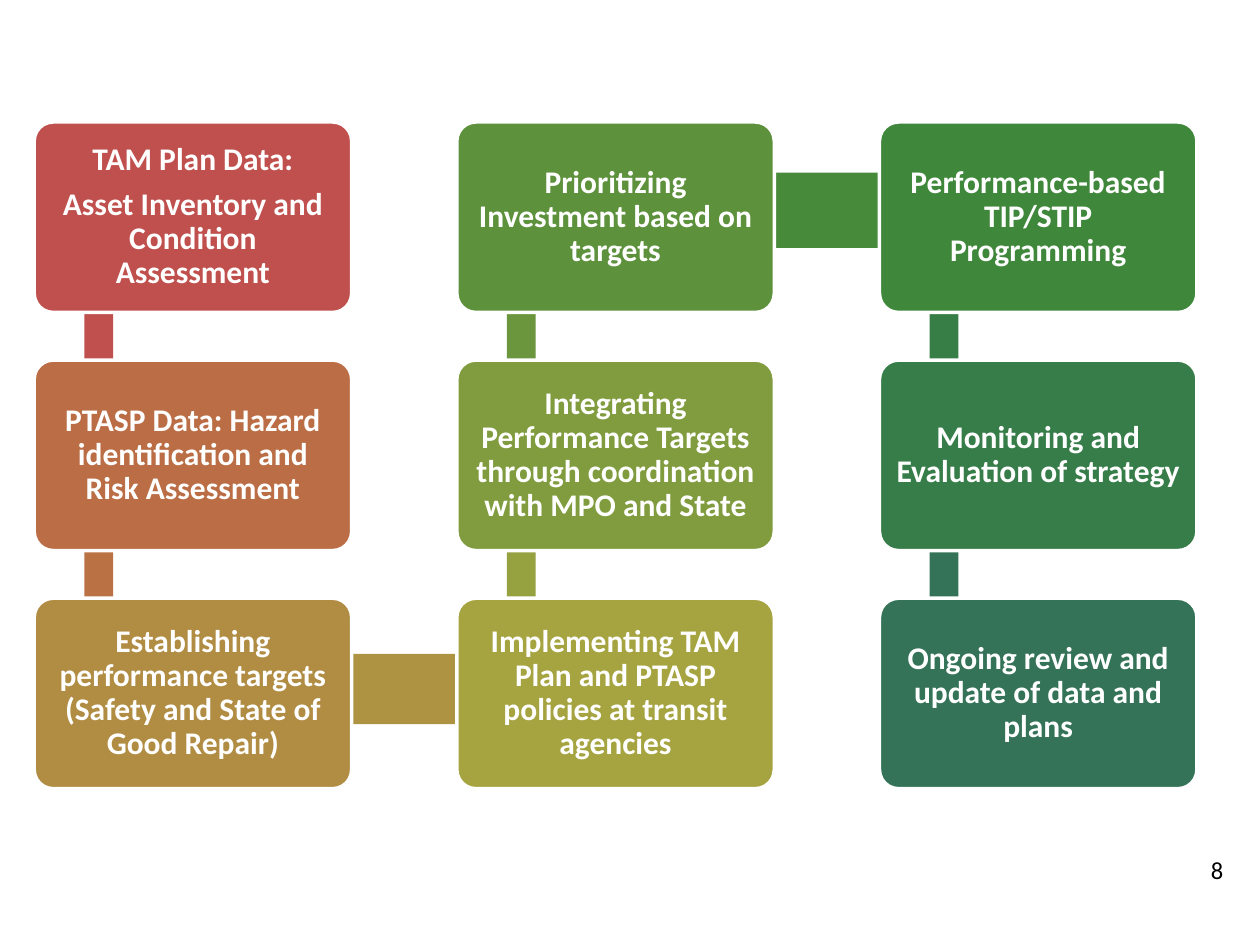
from pptx import Presentation
from pptx.dml.color import RGBColor
from pptx.enum.shapes import MSO_SHAPE as Shape
from pptx.enum.text import MSO_ANCHOR as Anchor, PP_ALIGN as Align
from pptx.util import Cm, Pt

FONT = "Calibri"
WHITE = RGBColor(0xFF, 0xFF, 0xFF)
BLACK = RGBColor(0, 0, 0)

# Steps in order: column, row, colour, paragraphs
STEPS = [
    (0, 0, "C0504D", ["TAM Plan Data:", "Asset Inventory and Condition Assessment"]),
    (0, 1, "BB6E45", ["PTASP Data: Hazard identification and Risk Assessment"]),
    (0, 2, "B18C43", ["Establishing performance targets (Safety and State of Good Repair)"]),
    (1, 2, "A6A441", ["Implementing TAM Plan and PTASP policies at transit agencies"]),
    (1, 1, "809C3E", ["Integrating Performance Targets through coordination with MPO and State"]),
    (1, 0, "5D913C", ["Prioritizing Investment based on targets"]),
    (2, 0, "3F873A", ["Performance-based TIP/STIP Programming"]),
    (2, 1, "377D49", ["Monitoring and Evaluation of strategy"]),
    (2, 2, "347358", ["Ongoing review and update of data and plans"]),
]

# Links down a column: column, upper row, colour
DOWN_LINKS = [
    (0, 0, "C0504D"), (0, 1, "BA7244"),
    (1, 1, "96A240"), (1, 0, "6B963D"),
    (2, 0, "377E46"), (2, 1, "347358"),
]
# Links to the next column: column, row, offset x, offset y, width, height, colour
ACROSS_LINKS = [
    (0, 2, 1.68, 1.12, 7.82, 1.42, "AE9342"),
    (1, 0, 2.26, 1.02, 8.33, 1.52, "478A3A"),
]

# Grid, in cm
LEFT, TOP = 0.69, 2.46
STEP_W, STEP_H = 6.4, 3.84
PITCH_X, PITCH_Y = 8.52, 4.8
DOWN_X, DOWN_Y, DOWN_W = 1.01, 0.98, 0.58


def add_block(slide, kind, column, row, offset_x, offset_y, width, height, colour):
    block = slide.shapes.add_shape(
        kind,
        Cm(LEFT + column * PITCH_X + offset_x), Cm(TOP + row * PITCH_Y + offset_y),
        Cm(width), Cm(height))
    block.shadow.inherit = False
    block.fill.solid()
    block.fill.fore_color.rgb = RGBColor.from_string(colour)
    block.line.fill.background()
    return block


def add_step(slide, column, row, colour, paragraphs):
    step = add_block(slide, Shape.ROUNDED_RECTANGLE, column, row, 0, 0, STEP_W, STEP_H, colour)
    step.adjustments[0] = 0.1
    step.line.color.rgb = WHITE
    step.line.width = Pt(2)
    frame = step.text_frame
    frame.word_wrap = True
    frame.vertical_anchor = Anchor.MIDDLE
    frame.margin_left = frame.margin_right = frame.margin_top = frame.margin_bottom = Cm(0.18)
    frame.text = "\n".join(paragraphs)
    for paragraph in frame.paragraphs:
        paragraph.alignment = Align.CENTER
        paragraph.line_spacing = 0.9
        paragraph.space_after = Pt(6.3)
        paragraph.font.name = FONT
        paragraph.font.size = Pt(18)
        paragraph.font.bold = True
        paragraph.font.color.rgb = WHITE


def main():
    deck = Presentation()
    deck.slide_width, deck.slide_height = Cm(25.4), Cm(19.05)
    slide = deck.slides.add_slide(deck.slide_layouts[6])

    # Links lie behind the steps
    for column, row, colour in DOWN_LINKS:
        add_block(slide, Shape.RECTANGLE, column, row, DOWN_X, DOWN_Y, DOWN_W, PITCH_Y, colour)
    for link in ACROSS_LINKS:
        add_block(slide, Shape.RECTANGLE, *link)

    # Steps
    for step in STEPS:
        add_step(slide, *step)

    # Page number
    page_number = slide.shapes.add_textbox(Cm(24.16), Cm(17.12), Cm(1.47), Cm(1.96))
    page_number.text_frame.word_wrap = True
    paragraph = page_number.text_frame.paragraphs[0]
    paragraph.text = "8"
    paragraph.font.name = FONT
    paragraph.font.size = Pt(14)
    paragraph.font.color.rgb = BLACK

    deck.save("out.pptx")


if __name__ == "__main__":
    main()
